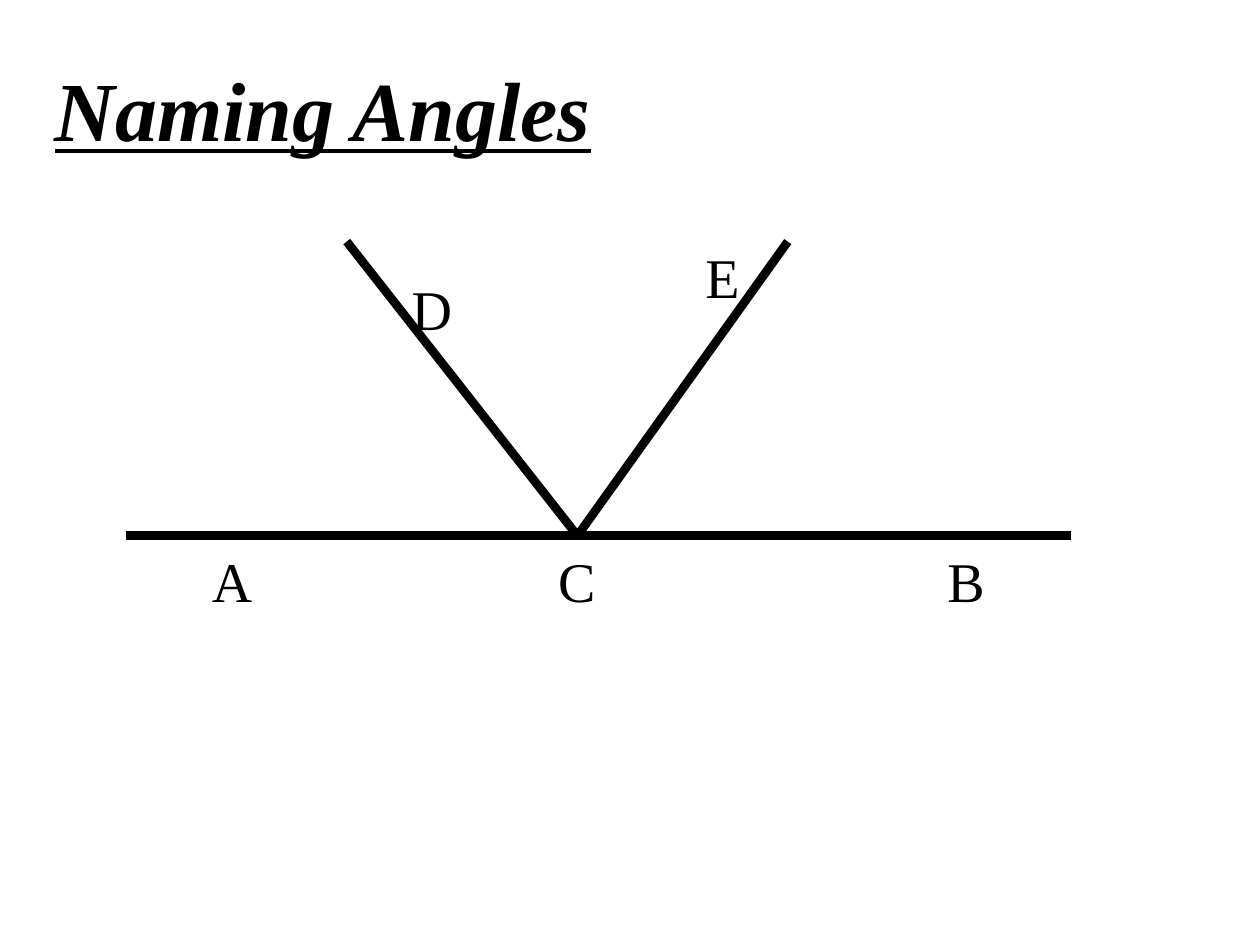
from typing import NamedTuple

from lxml.etree import SubElement
from pptx import Presentation
from pptx.dml.color import RGBColor
from pptx.enum.shapes import MSO_CONNECTOR
from pptx.enum.text import MSO_ANCHOR, MSO_AUTO_SIZE, PP_ALIGN
from pptx.oxml.ns import qn
from pptx.slide import Slide
from pptx.text.text import Font
from pptx.util import Cm, Pt

COLORS = {"ink": "000000"}
FONT_NAME = "Times New Roman"
LABEL_WIDTH, LABEL_HEIGHT = 1.27, 1.6


class Point(NamedTuple):
    x: float
    y: float


class Segment(NamedTuple):
    start: Point
    end: Point


class Label(NamedTuple):
    text: str
    left: float
    top: float


VERTEX = Point(11.64, 10.8)
SEGMENTS = [
    Segment(Point(6.99, 4.87), VERTEX),
    Segment(VERTEX, Point(15.88, 4.87)),
    Segment(Point(2.54, VERTEX.y), Point(21.59, VERTEX.y)),
]
BASE_LABEL_TOP = 10.9
LABELS = [
    Label("E", 13.97, 4.77),
    Label("D", 8.05, 5.4),
    Label("A", 4.02, BASE_LABEL_TOP),
    Label("C", 11.0, BASE_LABEL_TOP),
    Label("B", 18.85, BASE_LABEL_TOP),
]


def style_font(font: Font, size: int) -> None:
    font.name = FONT_NAME
    font.size = Pt(size)
    font.color.rgb = RGBColor.from_string(COLORS["ink"])


def add_title(page: Slide, text: str) -> None:
    title = page.shapes.title
    title.left, title.top = Cm(0.85), Cm(1.04)
    title.width, title.height = Cm(23.28), Cm(15.67)
    frame = title.text_frame
    frame.text = text
    frame.word_wrap = True
    frame.auto_size = MSO_AUTO_SIZE.NONE
    frame.vertical_anchor = MSO_ANCHOR.TOP
    para = frame.paragraphs[0]
    para.alignment = PP_ALIGN.LEFT
    style_font(para.font, 48)
    para.font.bold = para.font.italic = para.font.underline = True


def add_segment(page: Slide, segment: Segment) -> None:
    line = page.shapes.add_connector(
        MSO_CONNECTOR.STRAIGHT,
        *(Cm(value) for value in (*segment.start, *segment.end)),
    )
    line.line.color.rgb = RGBColor.from_string(COLORS["ink"])
    line.line.width = Pt(5)
    SubElement(line._element.spPr, qn("a:effectLst"))


def add_label(page: Slide, label: Label) -> None:
    box = page.shapes.add_textbox(
        Cm(label.left), Cm(label.top), Cm(LABEL_WIDTH), Cm(LABEL_HEIGHT)
    )
    frame = box.text_frame
    frame.word_wrap = True
    frame.text = label.text
    style_font(frame.paragraphs[0].font, 32)


def main() -> None:
    deck = Presentation()
    deck.slide_width, deck.slide_height = Cm(25.4), Cm(19.05)
    page = deck.slides.add_slide(deck.slide_layouts.get_by_name("Title Only"))
    add_title(page, "Naming Angles")
    for segment in SEGMENTS:
        add_segment(page, segment)
    for label in LABELS:
        add_label(page, label)
    deck.save("out.pptx")


if __name__ == "__main__":
    main()
